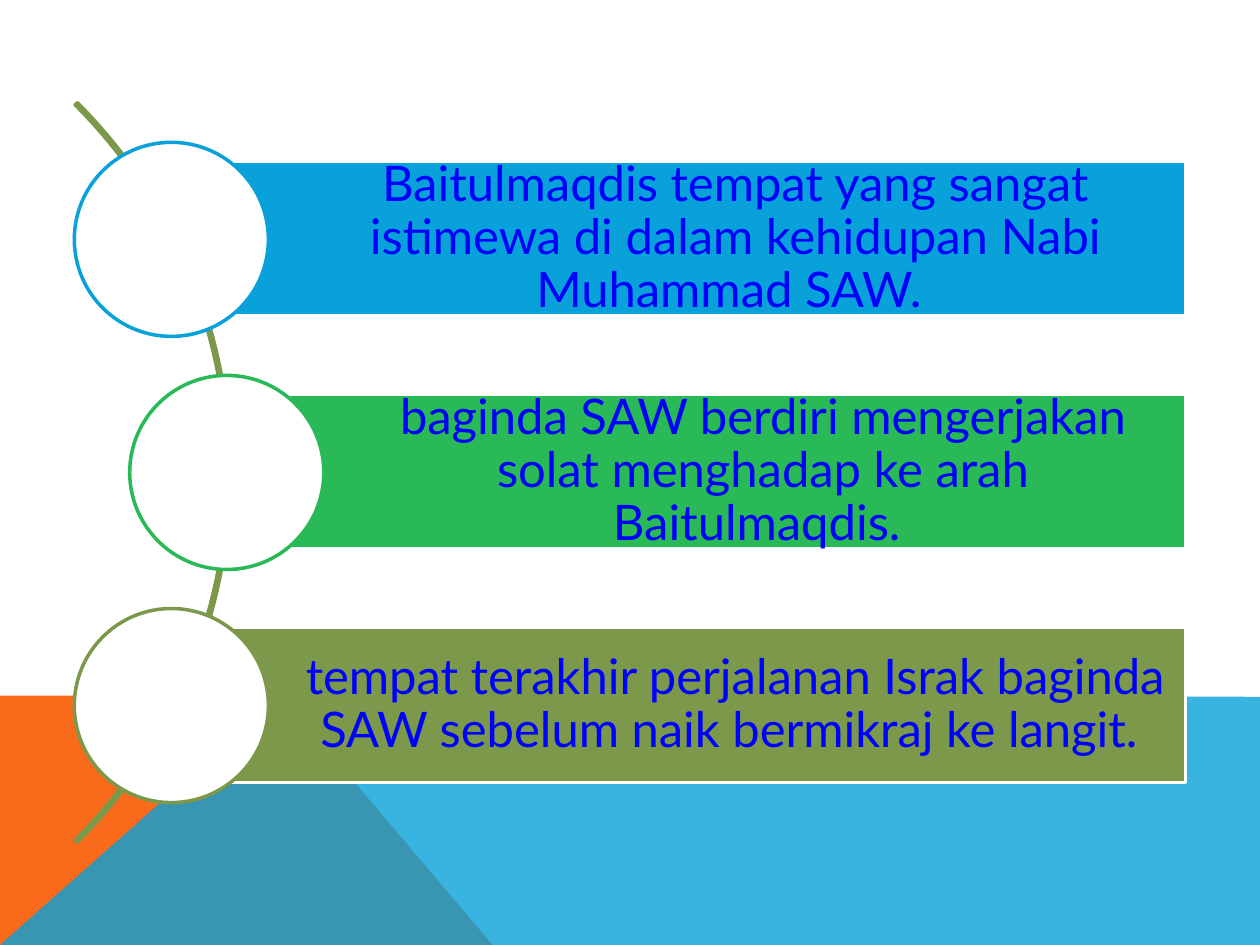
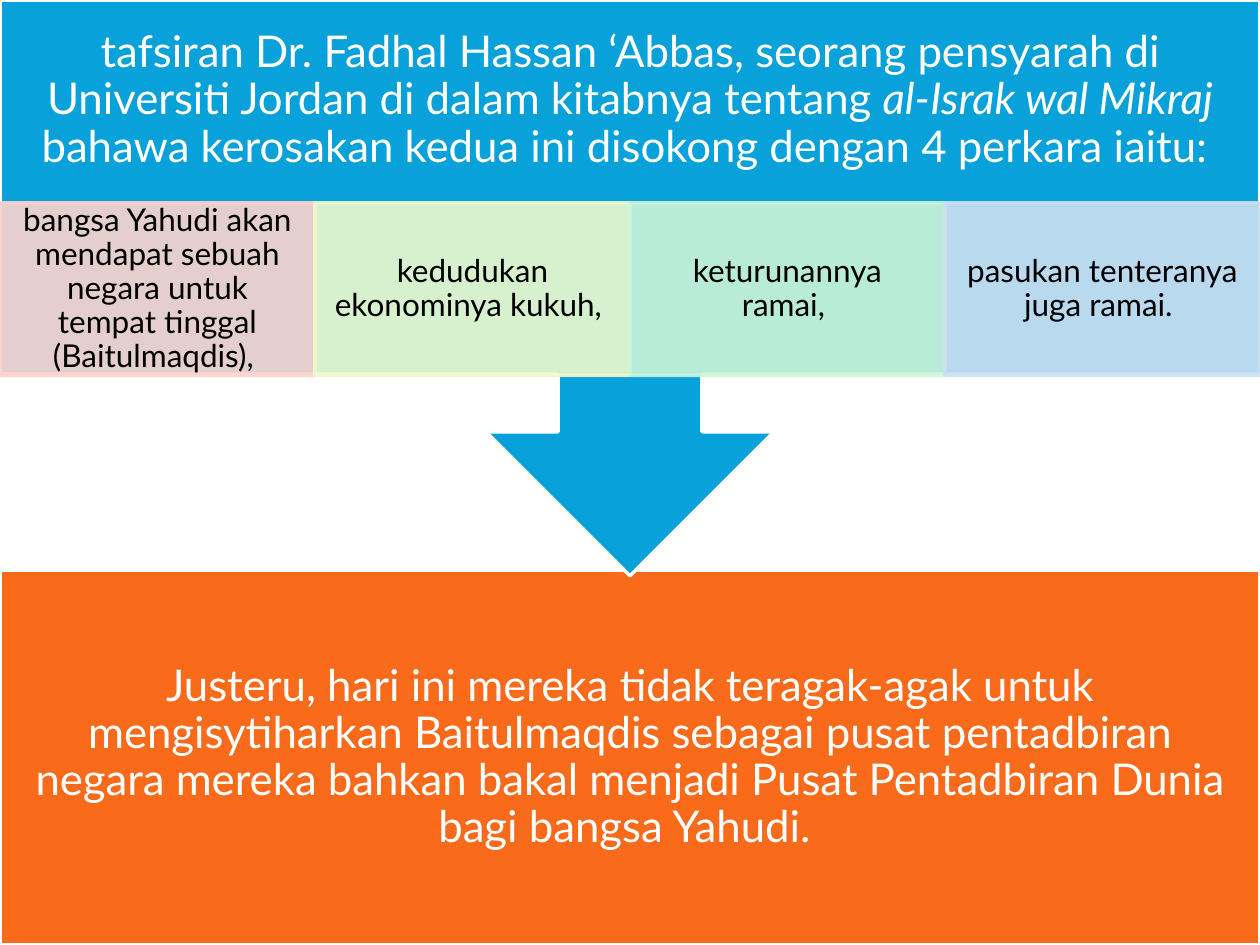
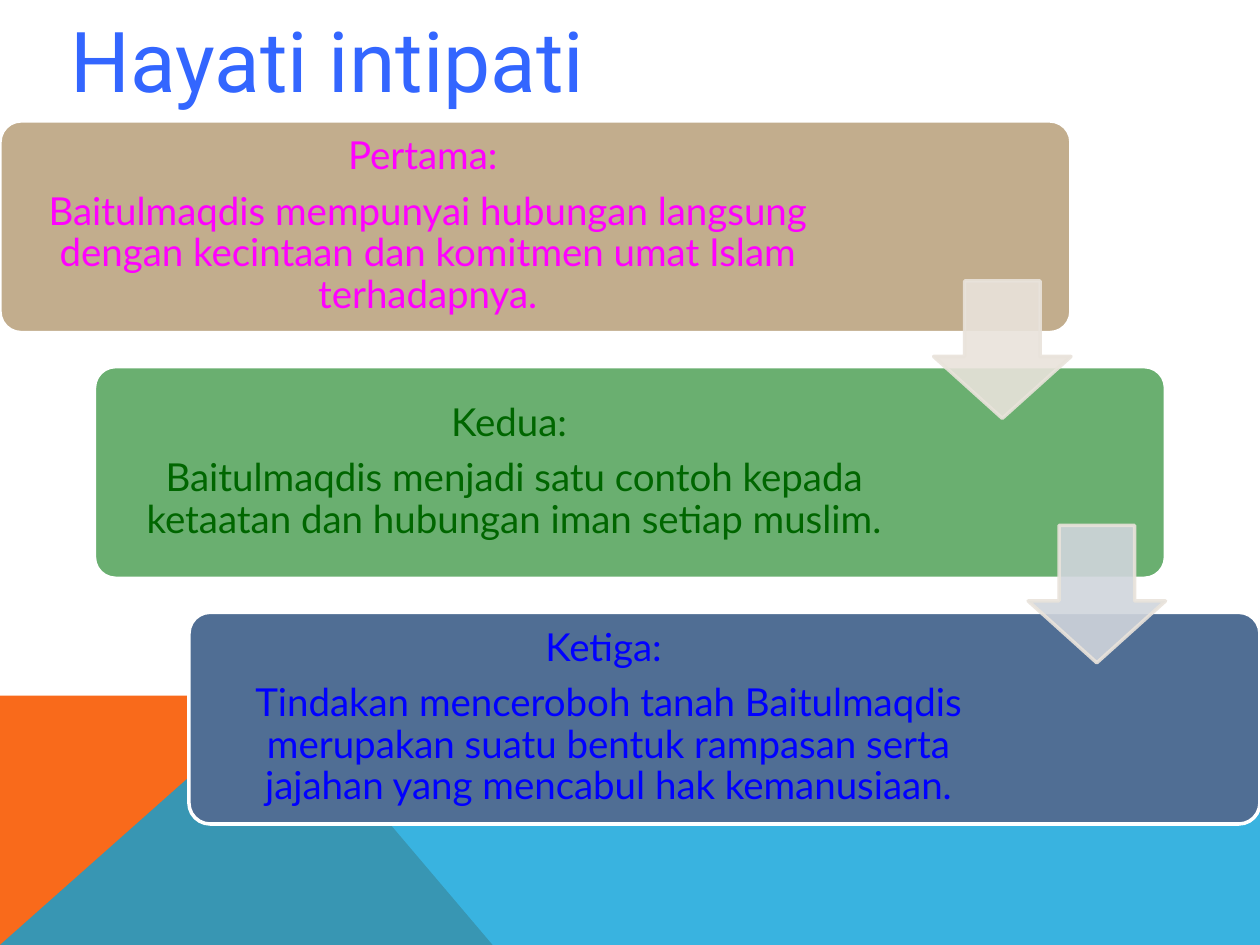
from lxml.etree import SubElement
from pptx import Presentation
from pptx.dml.color import RGBColor
from pptx.enum.shapes import MSO_SHAPE
from pptx.enum.text import MSO_ANCHOR, PP_ALIGN
from pptx.oxml.ns import qn
from pptx.util import Inches, Pt

BLUE, ORANGE, GREEN, OLIVE = "08A1D9", "F96A1B", "29B956", "7C984A"
WHITE, BLACK, INK_BLUE = "FFFFFF", "000000", "0000FF"
BODY_FONT, TITLE_FONT = "Lato", "Roboto"


def paint(fill, colour, opacity=100):
    """Give a fill a solid colour, see-through below 100 per cent opacity."""
    fill.solid()
    fill.fore_color.rgb = RGBColor.from_string(colour)
    if opacity < 100:
        solid = fill._xPr.find(qn("a:solidFill"))
        SubElement(solid[0], qn("a:alpha"), val=str(opacity * 1000))


def style(shape, fill=None, line=None, opacity=100):
    shape.shadow.inherit = False
    if fill:
        paint(shape.fill, fill, opacity)
    else:
        shape.fill.background()
    if line:
        shape.line.width = Pt(2)
        paint(shape.line.fill, line, opacity)
    else:
        shape.line.fill.background()


def add_figure(slide, preset, box, fill=None, line=WHITE, opacity=100, adjust=()):
    figure = slide.shapes.add_shape(preset, *map(Inches, box))
    for index, value in enumerate(adjust):
        figure.adjustments[index] = value
    style(figure, fill, line, opacity)
    return figure


def write(shape, paragraphs, size, colour, margins, italic=None):
    """Write centred paragraphs; the phrase given as italic is slanted."""
    frame = shape.text_frame
    frame.word_wrap = True
    frame.vertical_anchor = MSO_ANCHOR.MIDDLE
    (frame.margin_left, frame.margin_top,
     frame.margin_right, frame.margin_bottom) = map(Inches, margins)
    frame.text = "\n".join(paragraphs)
    for paragraph in frame.paragraphs:
        paragraph.alignment = PP_ALIGN.CENTER
        paragraph.line_spacing = 0.9
        paragraph.space_after = Pt(round(size * 0.35))
        if italic:
            before, after = paragraph.text.split(italic)
            paragraph.text = before
            for part in (italic, after):
                paragraph.add_run().text = part
        for run in paragraph.runs:
            run.font.name = BODY_FONT
            run.font.size = Pt(size)
            run.font.color.rgb = RGBColor.from_string(colour)
            run.font.italic = run.text == italic


def add_master_bands(prs, slide):
    """Draw the two bottom bands and move them to the slide master."""
    orange_band = [(0, 7.5), (0, 5.52), (2.23, 5.52), (3.91, 7.5)]
    blue_band = [(0, 7.5), (2.23, 5.52), (10, 5.53), (10, 7.5)]
    for outline, colour, opacity in ((orange_band, ORANGE, 100), (blue_band, BLUE, 80)):
        start, *corners = [(Inches(x), Inches(y)) for x, y in outline]
        builder = slide.shapes.build_freeform(*start)
        builder.add_line_segments(corners, close=True)
        band = builder.convert_to_shape()
        style(band, colour, opacity=opacity)
        prs.slide_master.shapes._spTree.append(band._element)


def build_importance(slide):
    add_figure(slide, MSO_SHAPE.BLOCK_ARC, (-6.47, -0.4, 8.3, 8.3),
               line=OLIVE, adjust=(189, 27, 0.003))
    points = [
        (1.36, BLUE, "Baitulmaqdis tempat yang sangat istimewa di dalam kehidupan Nabi Muhammad SAW. "),
        (1.8, GREEN, "baginda SAW berdiri mengerjakan solat menghadap ke arah Baitulmaqdis. "),
        (1.36, OLIVE, "tempat terakhir perjalanan Israk baginda SAW sebelum naik bermikraj ke langit. "),
    ]
    for row, (left, colour, text) in enumerate(points):
        top = 1.28 + 1.85 * row
        bar = add_figure(slide, MSO_SHAPE.RECTANGLE, (left, top, 9.41 - left, 1.23), colour)
        write(bar, [text], 28, INK_BLUE, (0.98, 0.08, 0.08, 0.08))
        add_figure(slide, MSO_SHAPE.OVAL, (left - 0.77, top - 0.15, 1.54, 1.54), WHITE, colour)


def build_interpretation(slide):
    wide_margins = (0.19,) * 4
    conclusion = add_figure(slide, MSO_SHAPE.RECTANGLE, (0, 4.53, 10, 2.97), ORANGE)
    write(conclusion, [
        "Justeru, hari ini mereka tidak teragak-agak untuk mengisytiharkan Baitulmaqdis "
        "sebagai pusat pentadbiran negara mereka bahkan bakal menjadi Pusat Pentadbiran "
        "Dunia bagi bangsa Yahudi. "], 25, WHITE, wide_margins)

    callout = add_figure(slide, MSO_SHAPE.UP_ARROW_CALLOUT, (0, 0, 10, 4.57), BLUE)
    callout.rotation = 180
    heading = slide.shapes.add_textbox(0, 0, Inches(10), Inches(1.6))
    write(heading, [
        "tafsiran Dr. Fadhal Hassan ‘Abbas, seorang pensyarah di Universiti Jordan di dalam "
        "kitabnya tentang al-Israk wal Mikraj bahawa kerosakan kedua ini disokong dengan "
        "4 perkara iaitu: "], 25, WHITE, wide_margins, italic="al-Israk wal Mikraj")

    supports = [
        ("FDD4CD", "bangsa Yahudi akan mendapat sebuah negara untuk tempat tinggal (Baitulmaqdis), "),
        ("EEF9CC", "kedudukan ekonominya kukuh, "),
        ("CCF5DA", "keturunannya ramai, "),
        ("CCE0F1", "pasukan tenteranya juga ramai. "),
    ]
    for column, (colour, text) in enumerate(supports):
        support = add_figure(slide, MSO_SHAPE.RECTANGLE, (2.5 * column, 1.61, 2.5, 1.37),
                             colour, colour, opacity=90)
        write(support, [text], 18, BLACK, (0.14, 0.03, 0.14, 0.03))


def add_title(slide, text):
    title = slide.shapes.add_textbox(0, Inches(0.01), Inches(5.2), Inches(0.91))
    frame = title.text_frame
    frame.word_wrap = False
    frame.vertical_anchor = MSO_ANCHOR.MIDDLE
    frame.text = text
    paragraph = frame.paragraphs[0]
    paragraph.alignment = PP_ALIGN.CENTER
    font = paragraph.runs[0].font
    font.name = TITLE_FONT
    font.size = Pt(48)
    font.color.rgb = RGBColor.from_string("3366FF")


def build_essence(slide):
    add_title(slide, "Hayati intipati")
    lessons = [
        ("C2AD8D", "FF00FF", 1.8, "Pertama: ",
         "Baitulmaqdis mempunyai hubungan langsung dengan kecintaan dan komitmen umat Islam terhadapnya."),
        ("6AAF70", "006600", 1.93, "Kedua: ",
         "Baitulmaqdis menjadi satu contoh kepada ketaatan dan hubungan iman setiap muslim."),
        ("506E94", INK_BLUE, 1.93, "Ketiga: ",
         "Tindakan menceroboh tanah Baitulmaqdis merupakan suatu bentuk rampasan serta "
         "jajahan yang mencabul hak kemanusiaan."),
    ]
    step = 0.75
    for row, (fill, ink, right_margin, *paragraphs) in enumerate(lessons):
        card = add_figure(slide, MSO_SHAPE.ROUNDED_RECTANGLE,
                          (step * row, 0.96 + 1.95 * row, 8.5, 1.68), fill, adjust=(0.1,))
        write(card, paragraphs, 22, ink, (0.09, 0.09, right_margin, 0.09))
    for row, fill in enumerate(("E9E3DB", "D0D5DC")):
        add_figure(slide, MSO_SHAPE.DOWN_ARROW,
                   (7.41 + step * row, 2.23 + 1.94 * row, 1.09, 1.09),
                   fill, "E9E3DB", opacity=90, adjust=(0.55, 0.45))


def main():
    prs = Presentation()
    prs.slide_width, prs.slide_height = Inches(10), Inches(7.5)
    blank = prs.slide_layouts[6]
    importance, interpretation, essence = [prs.slides.add_slide(blank) for _ in range(3)]
    add_master_bands(prs, importance)
    build_importance(importance)
    build_interpretation(interpretation)
    build_essence(essence)
    prs.save("out.pptx")


if __name__ == "__main__":
    main()
